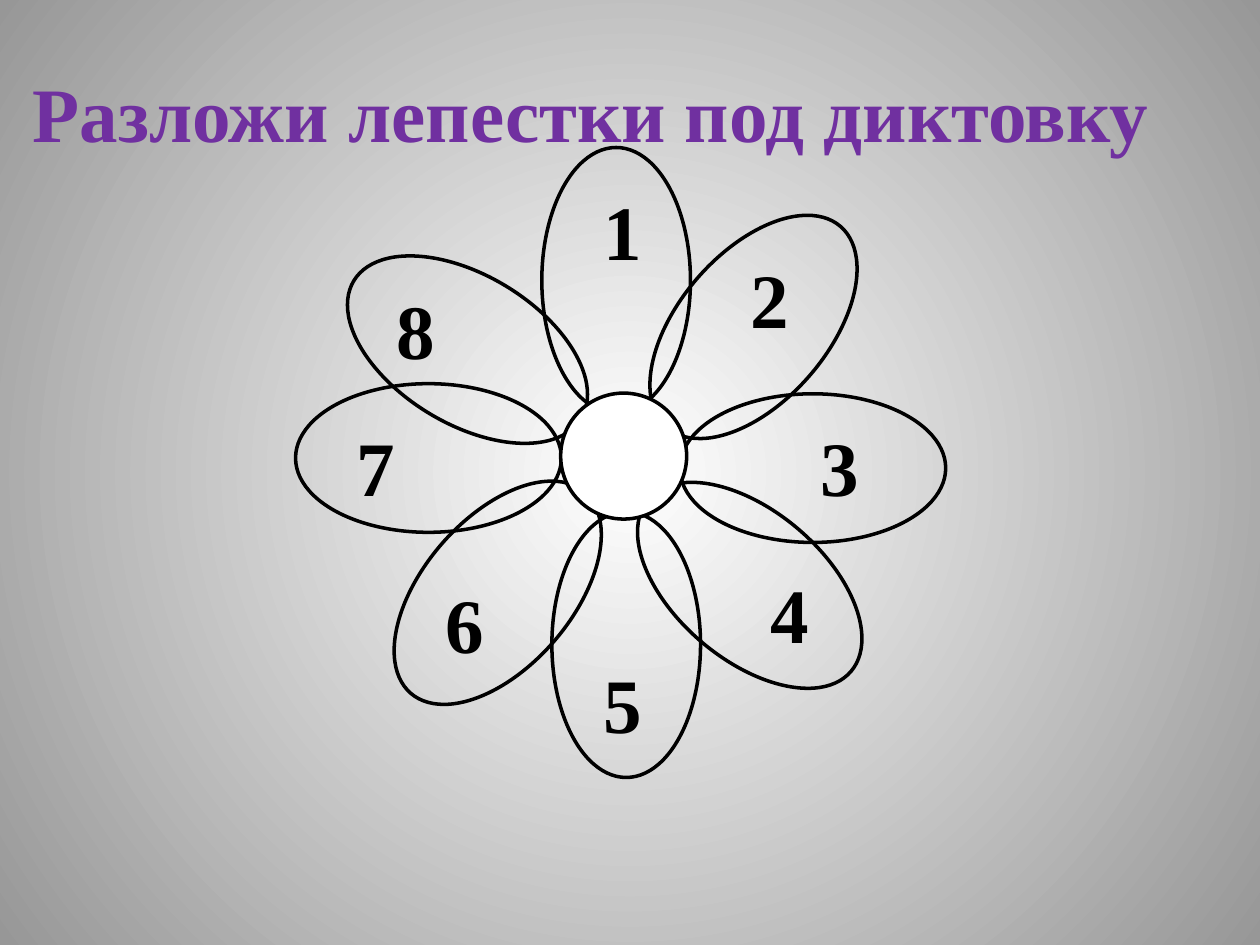
from lxml import etree
from pptx import Presentation
from pptx.dml.color import RGBColor
from pptx.enum import shapes, text
from pptx.oxml.ns import qn
from pptx.util import Inches, Pt

COLORS = {"title": "7030A0", "ink": "000000", "core": "FFFFFF",
          "glow": "FFFFFF", "edge": "979797"}
PETAL_SIZE = (1.18, 2.11)

# number: (petal left, petal top, rotation, label left, label top, label width)
PETALS = {
    6: (3.36, 3.65, 40.9, 3.44, 4.53, 0.55),
    7: (2.81, 2.58, 90, 2.73, 3.28, 0.7),
    8: (3.12, 1.72, 121.2, 3.05, 2.19, 0.7),
    5: (4.38, 4.06, 180, 4.69, 5.16, 0.7),
    4: (5.36, 3.59, 130.3, 6.02, 4.45, 0.47),
    3: (5.86, 2.66, 90, 6.41, 3.28, 0.55),
    2: (5.39, 1.54, 40.9, 5.86, 1.95, 0.55),
    1: (4.3, 1.17, 180, 4.69, 1.41, 0.39),
}


def color(name):
    return RGBColor.from_string(COLORS[name])


class FlowerPage:
    font = {"name": "Times New Roman", "size": Pt(44), "bold": True}
    frame = {"word_wrap": True, "vertical_anchor": text.MSO_ANCHOR.TOP,
             "auto_size": text.MSO_AUTO_SIZE.SHAPE_TO_FIT_TEXT}
    line_height = 0.84

    def __init__(self, page):
        self.page = page

    def background(self):
        """Fill the page with a glow that darkens outward from its centre."""
        fill = self.page.background.fill
        fill.gradient()
        for stop, name in zip(fill.gradient_stops, ("glow", "edge")):
            stop.color.rgb = color(name)
        gradient = self.page.element.find(".//" + qn("a:gradFill"))
        gradient.remove(gradient.find(qn("a:lin")))
        circle = etree.SubElement(gradient, qn("a:path"), {"path": "circle"})
        etree.SubElement(circle, qn("a:fillToRect"),
                         dict.fromkeys("ltrb", "50000"))

    def set_text(self, box, words, ink):
        for name, value in self.frame.items():
            setattr(box.text_frame, name, value)
        para = box.text_frame.paragraphs[0]
        para.alignment = text.PP_ALIGN.LEFT
        span = para.add_run()
        span.text = words
        for name, value in self.font.items():
            setattr(span.font, name, value)
        span.font.color.rgb = color(ink)

    def title(self, words, left, top, width):
        box = self.page.shapes.title
        place = {"left": left, "top": top, "width": width,
                 "height": self.line_height}
        for name, value in place.items():
            setattr(box, name, Inches(value))
        self.set_text(box, words, "title")

    def label(self, words, left, top, width):
        box = self.page.shapes.add_textbox(
            *map(Inches, (left, top, width, self.line_height)))
        self.set_text(box, words, "ink")

    def ellipse(self, left, top, width, height, rotation=0, fill=None):
        shape = self.page.shapes.add_shape(
            shapes.MSO_SHAPE.OVAL, *map(Inches, (left, top, width, height)))
        shape.rotation = rotation
        shape.shadow.inherit = False
        shape.line.color.rgb = color("ink")
        shape.line.width = Pt(2)
        if fill:
            shape.fill.solid()
            shape.fill.fore_color.rgb = color(fill)
        else:
            shape.fill.background()


def main():
    deck = Presentation()
    deck.slide_width, deck.slide_height = Inches(10), Inches(7.5)
    title_only = deck.slide_layouts[5]
    flower = FlowerPage(deck.slides.add_slide(title_only))
    flower.background()
    flower.title("Разложи лепестки под диктовку", 0.16, 0.47, 9.45)
    for left, top, rotation, *_ in PETALS.values():
        flower.ellipse(left, top, *PETAL_SIZE, rotation)
    flower.ellipse(4.45, 3.12, 1, 1, fill="core")
    for number in sorted(PETALS):
        flower.label(str(number), *PETALS[number][3:])
    deck.save("out.pptx")


if __name__ == "__main__":
    main()
